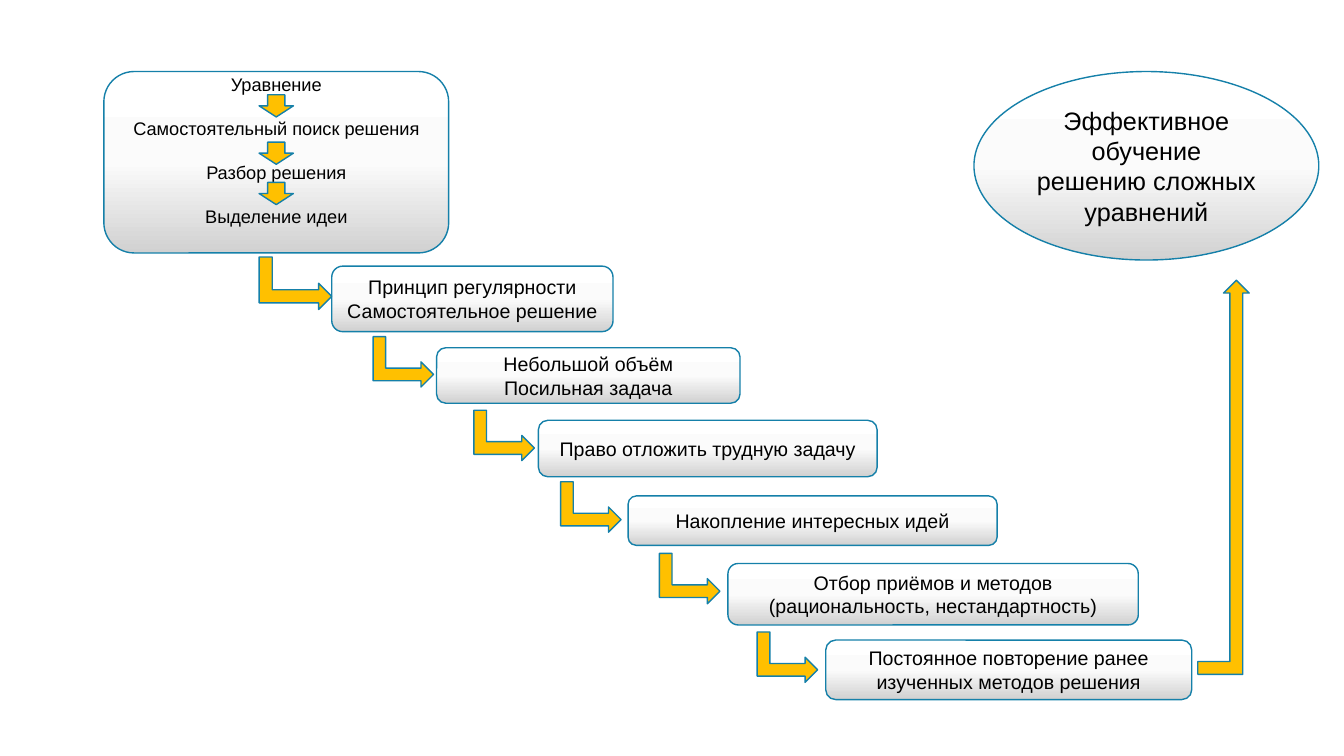
import copy
from dataclasses import dataclass

import pptx
import pptx.dml.color
import pptx.enum.shapes
import pptx.enum.text
import pptx.oxml.ns
import pptx.util

PX = 9144  # EMU per px, 100 px to the inch
SHAPES = pptx.enum.shapes.MSO_SHAPE


@dataclass(frozen=True)
class Theme:
    font: str = "Arial"
    ink: str = "000000"
    outline: str = "1580A9"
    arrow: str = "FFC000"
    gradient: tuple = ((0, "FFFFFF"), (0.5, "FBFBFB"), (1, "D1D1D1"))
    goal_size: int = 18
    step_size: int = 14
    routine_size: int = 13


THEME = Theme()

ROUTINE = ["Уравнение", "Самостоятельный поиск решения",
           "Разбор решения", "Выделение идеи"]
ROUTINE_ARROW_TOPS = [94, 141, 181]

# Each step: box (left, top, width, height), arrow into it, lines of text
STEPS = [
    ((329, 264, 279, 65), (257, 255, 72, 52),
     ["Принцип регулярности", "Самостоятельное решение"]),
    ((433, 345, 301, 55), (370, 334, 60, 50),
     ["Небольшой объём", "Посильная задача"]),
    ((534, 417, 336, 56), (470, 407, 60, 50),
     ["Право отложить трудную задачу"]),
    ((623, 492, 366, 49), (556, 478, 60, 50),
     ["Накопление интересных идей"]),
    ((722, 559, 407, 61), (654, 549, 60, 50),
     ["Отбор приёмов и методов", "(рациональность, нестандартность)"]),
    ((819, 635, 363, 59), (751, 627, 60, 50),
     ["Постоянное повторение ранее изученных методов решения"]),
]


def rgb(value):
    return pptx.dml.color.RGBColor.from_string(value)


def add_outlined(slide, preset, left, top, width, height):
    part = slide.shapes.add_shape(
        preset, *(round(length * PX) for length in (left, top, width, height)))
    part.shadow.inherit = False
    part.line.color.rgb = rgb(THEME.outline)
    part.line.width = pptx.util.Pt(1)
    return part


def add_panel(slide, preset, left, top, width, height):
    panel = add_outlined(slide, preset, left, top, width, height)
    panel.fill.gradient()
    panel.fill.gradient_angle = 270
    stops = panel._element.spPr.find(".//" + pptx.oxml.ns.qn("a:gsLst"))
    stops.insert(1, copy.deepcopy(stops[0]))
    for stop, (position, colour) in zip(panel.fill.gradient_stops, THEME.gradient):
        stop.position = position
        stop.color.rgb = rgb(colour)
    return panel


def add_arrow(slide, preset, left, top, width, height):
    arrow = add_outlined(slide, preset, left, top, width, height)
    arrow.fill.solid()
    arrow.fill.fore_color.rgb = rgb(THEME.arrow)
    return arrow


def add_step_arrow(slide, left, top, width, height):
    """Bent arrow turned to point right; the arguments give its turned frame."""
    shift = (width - height) / 2
    arrow = add_arrow(slide, SHAPES.BENT_UP_ARROW,
                      left + shift, top - shift, height, width)
    arrow.rotation = 90


def write_text(panel, lines, size, gap=0, inset_top=5, inset_bottom=5):
    frame = panel.text_frame
    frame.word_wrap = True
    frame.vertical_anchor = pptx.enum.text.MSO_ANCHOR.MIDDLE
    frame.margin_top = inset_top * PX
    frame.margin_bottom = inset_bottom * PX
    for index, line in enumerate(lines):
        paragraph = frame.add_paragraph() if index else frame.paragraphs[0]
        paragraph.alignment = pptx.enum.text.PP_ALIGN.CENTER
        if index and gap:
            paragraph.space_before = pptx.util.Pt(gap)
        run = paragraph.add_run()
        run.text = line
        run.font.name = THEME.font
        run.font.size = pptx.util.Pt(size)
        run.font.color.rgb = rgb(THEME.ink)


def main():
    deck = pptx.Presentation()
    deck.slide_width = 1333 * PX
    deck.slide_height = 750 * PX
    slide = deck.slides.add_slide(deck.slide_layouts[6])

    # Goal
    goal = add_panel(slide, SHAPES.OVAL, 966, 71, 342, 187)
    write_text(goal, ["Эффективное обучение решению сложных уравнений"],
               THEME.goal_size)

    # Routine for one equation
    routine = add_panel(slide, SHAPES.ROUNDED_RECTANGLE, 103, 71, 342, 180)
    write_text(routine, ROUTINE, THEME.routine_size, gap=16,
               inset_top=0, inset_bottom=24)
    for top in ROUTINE_ARROW_TOPS:
        add_arrow(slide, SHAPES.DOWN_ARROW, 257, top, 34, 22)

    # Staircase of steps
    for box, arrow, lines in STEPS:
        step = add_panel(slide, SHAPES.ROUNDED_RECTANGLE, *box)
        write_text(step, lines, THEME.step_size)
        add_step_arrow(slide, *arrow)

    # Way up to the goal
    add_arrow(slide, SHAPES.BENT_UP_ARROW, 1188, 278, 51, 391)

    deck.save("out.pptx")


if __name__ == "__main__":
    main()
